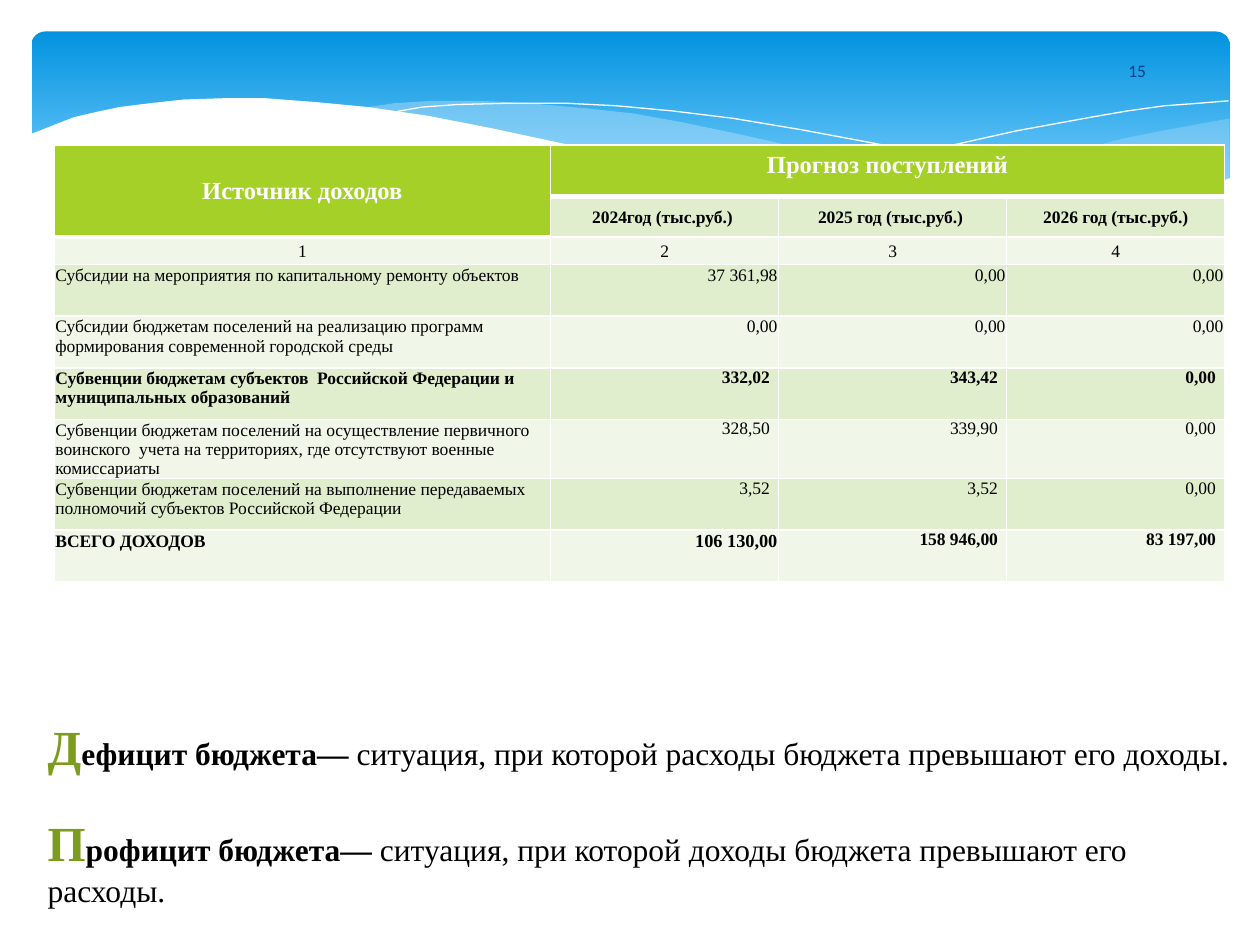
from lxml import etree
from pptx import Presentation, util as u
from pptx.dml.color import RGBColor
from pptx.enum import shapes, text
from pptx.oxml.ns import qn

ROMAN = "Times New Roman"
GREEN, BAND, PALE = "A5D028", "E1EECD", "F0F7E8"
LEFT, MID, RIGHT = text.PP_ALIGN.LEFT, text.PP_ALIGN.CENTER, text.PP_ALIGN.RIGHT
TIGHT, WIDE, ROOMY = (0.01, 0.01, 0.01, 0), (0.07, 0, 0.07, 0), (0.1, 0.05, 0.1, 0.05)

EAST = [(9.76, 0.94), (9.48, 0.99), (9.21, 1.04), (8.91, 1.1), (8.61, 1.18),
        (8.05, 1.31), (7.53, 1.43), (7.06, 1.52), (6.61, 1.6), (6.91, 1.64),
        (7.32, 1.68), (7.69, 1.71), (8.03, 1.72), (8.35, 1.72), (8.63, 1.7),
        (8.89, 1.66), (9.13, 1.62), (9.35, 1.56), (9.49, 1.52), (9.63, 1.47),
        (9.76, 1.41)]
WAVE = [(8.93, 1.67), (8.66, 1.64), (8.07, 1.54), (7.41, 1.42), (6.68, 1.26),
        (6.29, 1.16), (5.84, 1.06), (5.41, 0.97), (5.02, 0.9), (4.65, 0.86),
        (4.2, 0.82), (3.8, 0.8), (3.44, 0.8), (3.13, 0.82), (2.86, 0.86),
        (3.23, 0.9), (3.62, 0.97), (4.04, 1.06), (4.49, 1.16), (5.3, 1.35),
        (5.84, 1.46), (6.34, 1.56), (6.8, 1.63), (7.22, 1.68), (7.61, 1.71),
        (7.96, 1.73), (8.28, 1.73), (8.57, 1.71)]
ARC = [(3.09, 0.9), (3.18, 0.88), (3.35, 0.85), (3.63, 0.83), (4.01, 0.82),
       (4.5, 0.82), (4.89, 0.84), (5.33, 0.88), (5.82, 0.94), (6.36, 1.03),
       (6.95, 1.14), (7.6, 1.28), (8.31, 1.45), (9.07, 1.66)]
RISE = [(6.13, 1.51), (6.53, 1.41), (6.95, 1.3), (7.48, 1.17), (8.06, 1.04),
        (8.66, 0.93), (8.95, 0.88), (9.24, 0.84), (9.51, 0.82), (9.75, 0.8)]
HILL = [(9.77, 1.41), (9.59, 1.48), (9.4, 1.54), (9.1, 1.62), (8.75, 1.67),
        (8.37, 1.71), (7.93, 1.71), (7.44, 1.68), (6.88, 1.62), (6.26, 1.53),
        (5.55, 1.39), (5.03, 1.28), (4.47, 1.14), (3.91, 1.02), (3.4, 0.92),
        (2.92, 0.85), (2.5, 0.81), (2.11, 0.78), (1.77, 0.78), (1.46, 0.79),
        (1.19, 0.82), (0.95, 0.85), (0.76, 0.89), (0.59, 0.93), (0.46, 0.98),
        (0.36, 1.02), (0.23, 1.07), (0.23, 2.24), (9.77, 2.24)]

ROWS = [
    ["Источник доходов", "Прогноз поступлений", "", ""],
    ["", "2024год (тыс.руб.) ", "2025 год (тыс.руб.) ", " 2026 год (тыс.руб.) "],
    ["1", "2", "3", "4"],
    ["Субсидии на мероприятия по капитальному ремонту объектов",
     "37 361,98", "0,00", "0,00"],
    ["Субсидии бюджетам поселений на реализацию программ формирования "
     "современной городской среды", "0,00", "0,00", "0,00"],
    ["Субвенции бюджетам субъектов  Российской Федерации и муниципальных "
     "образований", "332,02", "343,42", "0,00"],
    ["Субвенции бюджетам поселений на осуществление первичного воинского  "
     "учета на территориях, где отсутствуют военные комиссариаты",
     "328,50", "339,90", "0,00"],
    ["Субвенции бюджетам поселений на выполнение передаваемых полномочий "
     "субъектов Российской Федерации", "3,52", "3,52", "0,00"],
    ["ВСЕГО ДОХОДОВ", "106 130,00", "158 946,00", "83 197,00"],
]
BOLD = {0, 1, 5, 8}
COLS = [3.94, 1.81, 1.81, 1.73]
TALL = [0.41, 0.32, 0.22] + [0.41] * 6
TERMS = [("Д", "ефицит бюджета—\u00a0",
          "ситуация, при которой расходы бюджета превышают его доходы."),
         ("П", "рофицит бюджета—\u00a0",
          "ситуация, при которой доходы бюджета превышают его расходы.")]


def rgb(code):
    return RGBColor.from_string(code)


class Page:
    def __init__(self, slide, face=ROMAN):
        self.slide, self.face = slide, face

    def run(self, para, words, size, color="000000", bold=False, face=None):
        run = para.add_run()
        run.text = words
        font = run.font
        font.name, font.size, font.bold = face or self.face, u.Pt(size), bold
        font.color.rgb = rgb(color)

    def sky(self, x, y, w, h):
        box = self.slide.shapes.add_shape(
            shapes.MSO_SHAPE.ROUNDED_RECTANGLE, *map(u.Inches, (x, y, w, h)))
        box.adjustments[0] = 0.07
        box.shadow.inherit = False
        box.line.fill.background()
        box.fill.gradient()
        box.fill.gradient_angle = 270
        stops = zip(box.fill.gradient_stops, (0, 0.9), ("0293E0", "83D3FE"))
        for stop, place, color in stops:
            stop.position, stop.color.rgb = place, rgb(color)

    def curve(self, points, fill=None, alpha=100):
        """Draw a filled outline, or an open white hairline without a fill."""
        spots = [(u.Inches(x), u.Inches(y)) for x, y in points]
        form = self.slide.shapes.build_freeform(*spots[0])
        form.add_line_segments(spots[1:], close=fill is not None)
        shape = form.convert_to_shape()
        shape.shadow.inherit = False
        if fill is None:
            shape.fill.background()
            shape.line.color.rgb = rgb("FFFFFF")
            shape.line.width = 0
            return
        shape.line.fill.background()
        shape.fill.solid()
        shape.fill.fore_color.rgb = rgb(fill)
        if alpha < 100:
            tint = shape._element.spPr.find(".//" + qn("a:srgbClr"))
            etree.SubElement(tint, qn("a:alpha"), val=str(alpha * 1000))

    def box(self, x, y, w, h, anchor=text.MSO_ANCHOR.TOP):
        frame = self.slide.shapes.add_textbox(*map(u.Inches, (x, y, w, h))).text_frame
        frame.word_wrap = True
        frame.vertical_anchor = anchor
        return frame

    def edge(self, cell, top, base):
        """Give a cell white borders; top and base are widths in points."""
        prop = cell._tc.get_or_add_tcPr()
        for side, width in (("L", 1), ("R", 1), ("T", top), ("B", base)):
            line = etree.SubElement(prop, qn("a:ln" + side), w=str(u.Pt(width)))
            fill = etree.SubElement(line, qn("a:solidFill"))
            etree.SubElement(fill, qn("a:srgbClr"), val="FFFFFF")

    def cell(self, cell, words, fill, size, color, bold, align, anchor, inset):
        cell.fill.solid()
        cell.fill.fore_color.rgb = rgb(fill)
        cell.vertical_anchor = anchor
        (cell.margin_left, cell.margin_top,
         cell.margin_right, cell.margin_bottom) = map(u.Inches, inset)
        para = cell.text_frame.paragraphs[0]
        para.alignment = align
        if words:
            self.run(para, words, size, color, bold)

    def table(self, x, y):
        grid = self.slide.shapes.add_table(
            len(ROWS), len(COLS), *map(u.Inches, (x, y, sum(COLS), sum(TALL)))).table
        grid.horz_banding = False
        for col, width in zip(grid.columns, COLS):
            col.width = u.Inches(width)
        for row, height in zip(grid.rows, TALL):
            row.height = u.Inches(height)
        for r, row in enumerate(ROWS):
            for c, words in enumerate(row):
                cell = grid.cell(r, c)
                head = r == 0 or (r, c) == (1, 0)
                last = 1 if c == 0 else 0    # last header row in this column
                self.edge(cell, 3 if r == last + 1 else 1, 3 if r == last else 1)
                total = (r, c) == (8, 1)
                inset = ROOMY if head else WIDE if r > 4 and c and not total else TIGHT
                centre = head or r in (1, 2)
                self.cell(
                    cell, words, GREEN if head else BAND if r % 2 else PALE,
                    14 if head else 10.5 if total else 10,
                    "FFFFFF" if head else "000000", r in BOLD,
                    MID if centre else RIGHT if c else LEFT,
                    text.MSO_ANCHOR.MIDDLE if centre and (r or not c)
                    else text.MSO_ANCHOR.TOP, inset)
        grid.cell(0, 0).merge(grid.cell(1, 0))
        grid.cell(0, 1).merge(grid.cell(0, 3))

    def terms(self, frame):
        for i, (cap, name, sense) in enumerate(TERMS):
            para = frame.add_paragraph() if i else frame.paragraphs[0]
            if i:
                para.space_before = u.Pt(21)
            self.run(para, cap, 28, "7C9C1E", True)
            self.run(para, name, 18, bold=True)
            self.run(para, sense, 18)


def main():
    deck = Presentation()
    deck.slide_width, deck.slide_height = u.Inches(10), u.Inches(7.5)
    page = Page(deck.slides.add_slide(deck.slide_layouts[6]))
    page.sky(0.25, 0.25, 9.51, 1.56)
    page.curve(EAST, "C6E7FC", 29)
    page.curve(WAVE, "C6E7FC", 40)
    page.curve(ARC)
    page.curve(RISE)
    page.curve(HILL, "FFFFFF")
    page.table(0.43, 1.15)
    page.terms(page.box(0.28, 5.64, 9.61, 1.65))
    para = page.box(8.39, 0.36, 1.27, 0.4, text.MSO_ANCHOR.MIDDLE).paragraphs[0]
    para.alignment = MID
    page.run(para, "15", 10, "073E87", face="Calibri")
    deck.save("out.pptx")


if __name__ == "__main__":
    main()
